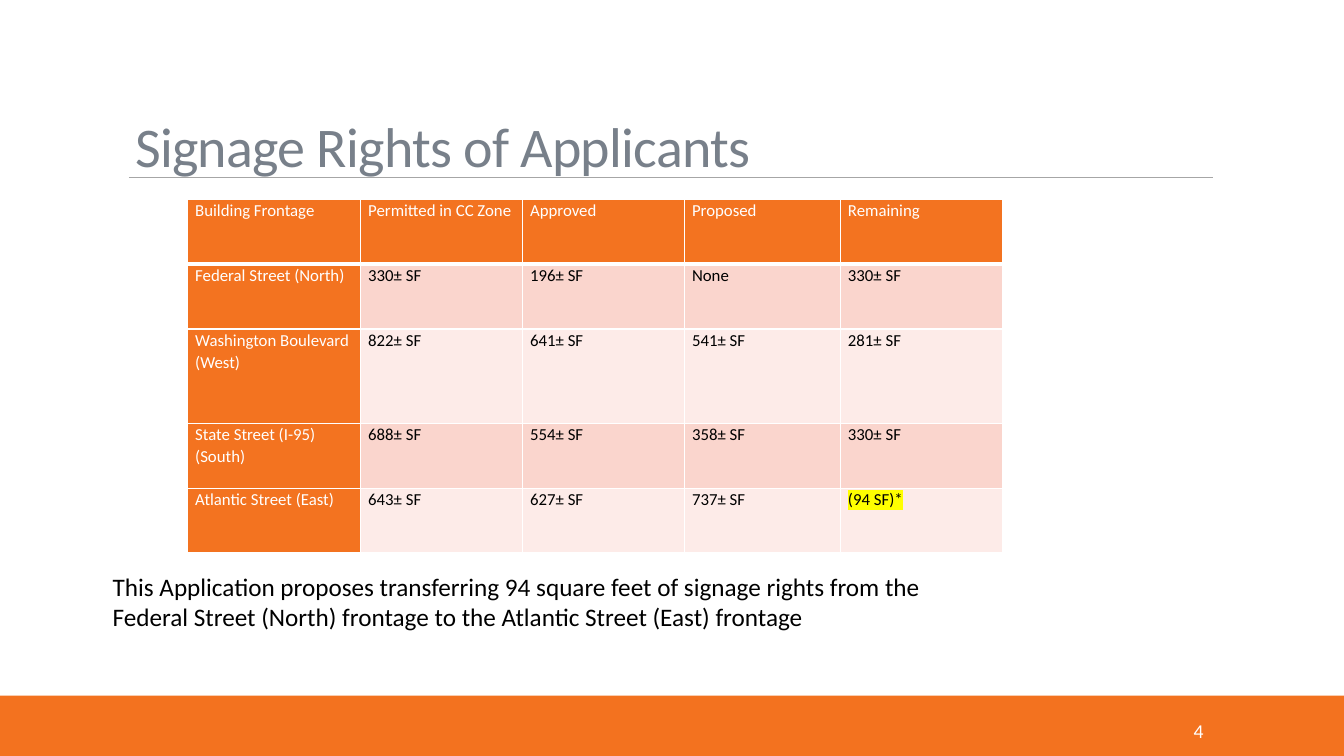
import pptx
import pptx.util
import pptx.dml.color
import pptx.enum.shapes
import pptx.enum.text
import pptx.oxml.ns
from lxml import etree

Cm, Pt = pptx.util.Cm, pptx.util.Pt
qn = pptx.oxml.ns.qn
RGB = pptx.dml.color.RGBColor.from_string
ANCHOR = pptx.enum.text.MSO_ANCHOR
COLORS = {
    "bar": "F3721F", "header": "F37320", "odd": "FAD5CD", "even": "FDEBE8",
    "title": "78808A", "rule": "A6A6A6", "white": "FFFFFF", "black": "000000",
    "mark": "FFFF00",
}


def add_run(p, text, size, color):
    r = p.add_run()
    r.text = text
    r.font.name = "Calibri"
    r.font.size = Pt(size)
    r.font.color.rgb = RGB(COLORS[color])
    return r


def add_border(cell, side, width):
    ln = etree.SubElement(cell._tc.get_or_add_tcPr(), qn("a:" + side), w=str(Pt(width)))
    fill = etree.SubElement(ln, qn("a:solidFill"))
    etree.SubElement(fill, qn("a:srgbClr"), val=COLORS["white"])


prs = pptx.Presentation()
prs.slide_width, prs.slide_height = Cm(33.87), Cm(19.05)
s = prs.slides.add_slide(prs.slide_layouts[5])

bar = s.shapes.add_shape(pptx.enum.shapes.MSO_SHAPE.RECTANGLE, 0, Cm(17.53), prs.slide_width, Cm(1.52))
bar.shadow.inherit = False
bar.fill.solid()
bar.fill.fore_color.rgb = RGB(COLORS["bar"])
bar.line.fill.background()

rule = s.shapes.add_connector(pptx.enum.shapes.MSO_CONNECTOR.STRAIGHT, Cm(3.25), Cm(4.47), Cm(30.58), Cm(4.47))
rule.line.color.rgb = RGB(COLORS["rule"])
rule.line.width = Pt(1)
etree.SubElement(rule._element.spPr, qn("a:effectLst"))

title = s.shapes.title
title.left, title.top, title.width, title.height = Cm(3.15), Cm(2.95), Cm(21.56), Cm(1.19)
tf = title.text_frame
tf.auto_size = pptx.enum.text.MSO_AUTO_SIZE.NONE
tf.vertical_anchor = ANCHOR.TOP
p = tf.paragraphs[0]
p.alignment = pptx.enum.text.PP_ALIGN.LEFT
p.line_spacing = 0.85
r = add_run(p, "Signage Rights of Applicants", 40, "title")
r.font._element.set("spc", "-50")

number = s.shapes.add_textbox(Cm(26.95), Cm(17.91), Cm(3.63), Cm(1.02))
tf = number.text_frame
tf.word_wrap = True
tf.vertical_anchor = ANCHOR.MIDDLE
p = tf.paragraphs[0]
p.alignment = pptx.enum.text.PP_ALIGN.RIGHT
add_run(p, "4", 14, "white")

rows = [
    ["Building Frontage", "Permitted in CC Zone", "Approved", "Proposed", "Remaining"],
    ["Federal Street (North)", "330± SF", "196± SF", "None", "330± SF"],
    ["Washington Boulevard (West)", "822± SF", "641± SF", "541± SF", "281± SF"],
    ["State Street (I-95) (South)", "688± SF", "554± SF", "358± SF", "330± SF"],
    ["Atlantic Street (East)", "643± SF", "627± SF", "737± SF", "(94 SF)*"],
]
widths = [4.36, 4.08, 4.08, 3.93, 4.08]
heights = [1.63, 1.63, 2.38, 1.63, 1.63]
table = s.shapes.add_table(5, 5, Cm(4.73), Cm(5.03), Cm(sum(widths)), Cm(sum(heights))).table
table.first_col = True
for col, width in zip(table.columns, widths):
    col.width = Cm(width)
for i, row in enumerate(rows):
    table.rows[i].height = Cm(heights[i])
    for j, text in enumerate(row):
        cell = table.cell(i, j)
        heading = i == 0 or j == 0
        cell.margin_left = cell.margin_right = Cm(0.19)
        cell.margin_top = cell.margin_bottom = 0
        for side in ("lnL", "lnR", "lnT", "lnB"):
            add_border(cell, side, 3 if i == 0 and side == "lnB" else 1)
        cell.fill.solid()
        cell.fill.fore_color.rgb = RGB(COLORS["header" if heading else "odd" if i % 2 else "even"])
        p = cell.text_frame.paragraphs[0]
        p.line_spacing = 1.07
        r = add_run(p, text, 12, "white" if heading else "black")
        if text == "(94 SF)*":
            mark = etree.Element(qn("a:highlight"))
            etree.SubElement(mark, qn("a:srgbClr"), val=COLORS["mark"])
            r.font._element.find(qn("a:solidFill")).addnext(mark)

note = s.shapes.add_textbox(Cm(2.59), Cm(14.27), Cm(22.68), Cm(1.8))
tf = note.text_frame
tf.word_wrap = True
tf.auto_size = pptx.enum.text.MSO_AUTO_SIZE.SHAPE_TO_FIT_TEXT
add_run(
    tf.paragraphs[0],
    "This Application proposes transferring 94 square feet of signage rights from the "
    "Federal Street (North) frontage to the Atlantic Street (East) frontage",
    18, "black",
)

prs.save("out.pptx")
